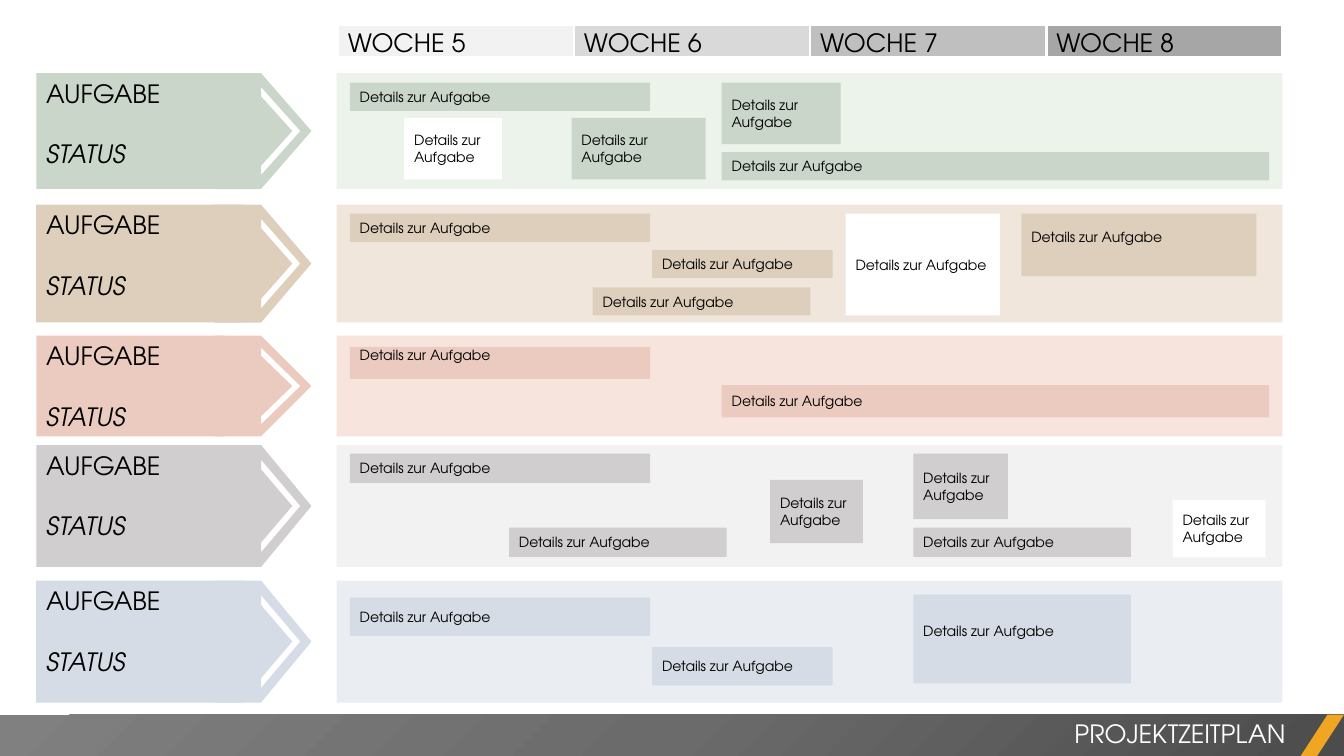
import dataclasses
import typing

import pptx
import pptx.dml.color
import pptx.enum.shapes
import pptx.enum.text
import pptx.oxml
import pptx.oxml.ns
import pptx.util

RGB = pptx.dml.color.RGBColor
SHAPE = pptx.enum.shapes.MSO_SHAPE
ANCHOR = pptx.enum.text.MSO_ANCHOR
ALIGN = pptx.enum.text.PP_ALIGN
Pt = pptx.util.Pt
Point = tuple[float, float]

BLACK, WHITE = RGB(0, 0, 0), RGB(255, 255, 255)
GREEN, MINT = RGB(0xCA, 0xD6, 0xCA), RGB(0xEC, 0xF3, 0xEB)
TAN, CREAM = RGB(0xDD, 0xCF, 0xBC), RGB(0xF0, 0xE6, 0xDC)
CORAL, BLUSH = RGB(0xEB, 0xCB, 0xBF), RGB(0xF7, 0xE5, 0xDD)
GREY, PALE = RGB(0xD0, 0xCE, 0xCE), RGB(0xF2, 0xF2, 0xF2)
BLUE, ICE = RGB(0xD6, 0xDC, 0xE5), RGB(0xEA, 0xEE, 0xF3)
AMBER = RGB(0xF0, 0xA6, 0x22)
WEEKS = {
    "WOCHE 5": PALE,
    "WOCHE 6": RGB(0xD9, 0xD9, 0xD9),
    "WOCHE 7": RGB(0xBF, 0xBF, 0xBF),
    "WOCHE 8": RGB(0xA6, 0xA6, 0xA6),
}
FONT = "TeX Gyre Adventor"
DETAIL = "Details zur Aufgabe"

# The slide is a grid of 40 columns and 30 rows.
WIDTH, HEIGHT = pptx.util.Inches(13.33), pptx.util.Inches(7.5)
COL, ROW = WIDTH / 40, HEIGHT / 30
LABEL_X, LANE_X, LANE_W = 1.08, 10.02, 28.15
FOOT_Y, FOOT_H = 28.36, 1.64

NS = pptx.oxml.ns.nsdecls("a")
STOPS = "".join(
    f'<a:gs pos="{pos}"><a:srgbClr val="{tone}"/></a:gs>'
    for pos, tone in ((0, "4C4C4C"), (50000, "6B6B6B"), (100000, "808080"))
)
GLOW = (
    f'<a:gradFill {NS} rotWithShape="1"><a:gsLst>{STOPS}</a:gsLst>'
    '<a:path path="circle"><a:fillToRect l="100000" t="100000"/></a:path></a:gradFill>'
)


@dataclasses.dataclass
class Bar:
    """A task bar, in columns and rows from its lane's top left corner."""
    x: float
    y: float
    w: float
    h: float
    blank: bool = False
    high: bool = False


@dataclasses.dataclass
class Lane:
    y: float
    h: float
    label_w: float
    dark: RGB
    light: RGB
    bars: list[Bar]


LANES = [
    Lane(2.9, 4.6, 5.61, GREEN, MINT, [
        Bar(0.39, 0.38, 8.94, 1.12),
        Bar(6.99, 1.78, 3.99, 2.44),
        Bar(2.01, 1.78, 2.91, 2.44, blank=True),
        Bar(11.46, 0.38, 3.54, 2.44),
        Bar(11.46, 3.14, 16.29, 1.12),
    ]),
    Lane(8.12, 4.68, 6.15, TAN, CREAM, [
        Bar(0.39, 0.36, 8.94, 1.12),
        Bar(15.15, 0.36, 4.59, 4.04, blank=True),
        Bar(20.38, 0.36, 6.99, 2.48, high=True),
        Bar(9.39, 1.8, 5.37, 1.12),
        Bar(7.62, 3.28, 6.48, 1.12),
    ]),
    Lane(13.32, 4, 5.61, CORAL, BLUSH, [
        Bar(0.39, 0.44, 8.94, 1.28, high=True),
        Bar(11.46, 1.96, 16.29, 1.28),
    ]),
    Lane(17.66, 4.84, 5.61, GREY, PALE, [
        Bar(0.39, 0.34, 8.94, 1.16),
        Bar(24.88, 2.18, 2.76, 2.28, blank=True),
        Bar(17.16, 0.34, 2.82, 2.6),
        Bar(12.9, 1.38, 2.76, 2.52),
        Bar(5.13, 3.28, 6.48, 1.16),
        Bar(17.16, 3.28, 6.48, 1.16),
    ]),
    Lane(23.04, 4.84, 6.15, BLUE, ICE, [
        Bar(0.39, 0.68, 8.94, 1.52),
        Bar(9.39, 2.64, 5.37, 1.52),
        Bar(17.16, 0.56, 6.48, 3.52, high=True),
    ]),
]


def box(x: float, y: float, w: float, h: float) -> list[int]:
    """Turn grid units into left, top, width and height."""
    return [round(x * COL), round(y * ROW), round(w * COL), round(h * ROW)]


def paint(shape: typing.Any, tone: RGB) -> None:
    shape.shadow.inherit = False
    shape.fill.solid()
    shape.fill.fore_color.rgb = tone
    shape.line.fill.background()


def block(slide: typing.Any, kind: SHAPE, place: list[int], tone: RGB) -> typing.Any:
    shape = slide.shapes.add_shape(kind, *place)
    paint(shape, tone)
    return shape


def write(frame: typing.Any, lines: list[str], size: float, tone: RGB = BLACK,
          align: ALIGN = ALIGN.LEFT) -> None:
    frame.word_wrap = True
    frame.text = "\n".join(lines)
    for para in frame.paragraphs:
        para.alignment = align
        para.font.name, para.font.size = FONT, Pt(size)
        para.font.color.rgb = tone


def arrow(slide: typing.Any, lane: Lane) -> None:
    """Draw the label's point with a chevron cut out of it."""
    def spot(x: float, share: float) -> Point:
        return x * COL, (lane.y + share * lane.h) * ROW

    rim = [spot(*p) for p in ((7.77, 0), (6.39, 0), (6.39, 1), (7.77, 1), (9.27, 0.5))]
    cut = [spot(*p) for p in ((7.77, 0.8), (8.7, 0.5), (7.77, 0.2),
                              (7.77, 0.12), (8.94, 0.5), (7.77, 0.88))]
    build = slide.shapes.build_freeform(*rim[0])
    build.add_line_segments(rim[1:])
    build.move_to(*cut[0])
    build.add_line_segments(cut[1:])
    paint(build.convert_to_shape(), lane.dark)


def draw_lane(slide: typing.Any, lane: Lane) -> None:
    label = block(slide, SHAPE.RECTANGLE, box(LABEL_X, lane.y, lane.label_w, lane.h), lane.dark)
    label.text_frame.vertical_anchor = ANCHOR.TOP
    write(label.text_frame, ["AUFGABE", "STATUS"], 18)
    status = label.text_frame.paragraphs[1]
    status.space_before, status.font.italic = Pt(21.5), True
    arrow(slide, lane)
    block(slide, SHAPE.RECTANGLE, box(LANE_X, lane.y, LANE_W, lane.h), lane.light)
    for bar in lane.bars:
        place = box(LANE_X + bar.x, lane.y + bar.y, bar.w, bar.h)
        task = block(slide, SHAPE.RECTANGLE, place, WHITE if bar.blank else lane.dark)
        frame = task.text_frame
        write(frame, [DETAIL], 10)
        frame.vertical_anchor = ANCHOR.TOP if bar.high else ANCHOR.MIDDLE
        if bar.high:
            frame.margin_top = max(0, place[3] // 2 - Pt(12))


def draw_weeks(slide: typing.Any) -> None:
    table = slide.shapes.add_table(1, len(WEEKS), *box(10.05, 0.96, 28.12, 1.32)).table
    table.first_row = table.horz_banding = False
    for cell, (week, tone) in zip(table.iter_cells(), WEEKS.items()):
        cell.margin_left = pptx.util.Inches(0.1)
        cell.margin_top = cell.margin_right = pptx.util.Inches(0.01)
        cell.margin_bottom = 0
        cell.vertical_anchor = ANCHOR.BOTTOM
        write(cell.text_frame, [week], 18)
        props = cell._tc.get_or_add_tcPr()
        for side in "LRTB":
            props.append(pptx.oxml.parse_xml(
                f'<a:ln{side} {NS} w="{Pt(2.25)}"><a:solidFill>'
                f'<a:srgbClr val="{WHITE}"/></a:solidFill></a:ln{side}>'))
        cell.fill.solid()
        cell.fill.fore_color.rgb = tone


def draw_foot(slide: typing.Any) -> None:
    strip = block(slide, SHAPE.RECTANGLE, box(0, FOOT_Y, 40, FOOT_H), GREY)
    solid = strip.element.spPr.find(pptx.oxml.ns.qn("a:solidFill"))
    solid.getparent().replace(solid, pptx.oxml.parse_xml(GLOW))
    slash = block(slide, SHAPE.PARALLELOGRAM, box(38.71, FOOT_Y, 1.29, FOOT_H), AMBER)
    slash.adjustments[0] = 0.65
    title = slide.shapes.title
    title.left, title.top, title.width, title.height = box(15.75, 28.32, 22.81, 1.6)
    write(title.text_frame, ["PROJEKTZEITPLAN"], 18, WHITE, ALIGN.RIGHT)
    title.text_frame.vertical_anchor = ANCHOR.TOP
    title.element.getparent().append(title.element)  # in front of the strip


def main() -> None:
    deck = pptx.Presentation()
    deck.slide_width, deck.slide_height = WIDTH, HEIGHT
    slide = deck.slides.add_slide(deck.slide_layouts.get_by_name("Title Only"))
    for lane in LANES:
        draw_lane(slide, lane)
    draw_weeks(slide)
    draw_foot(slide)
    deck.save("out.pptx")


if __name__ == "__main__":
    main()
